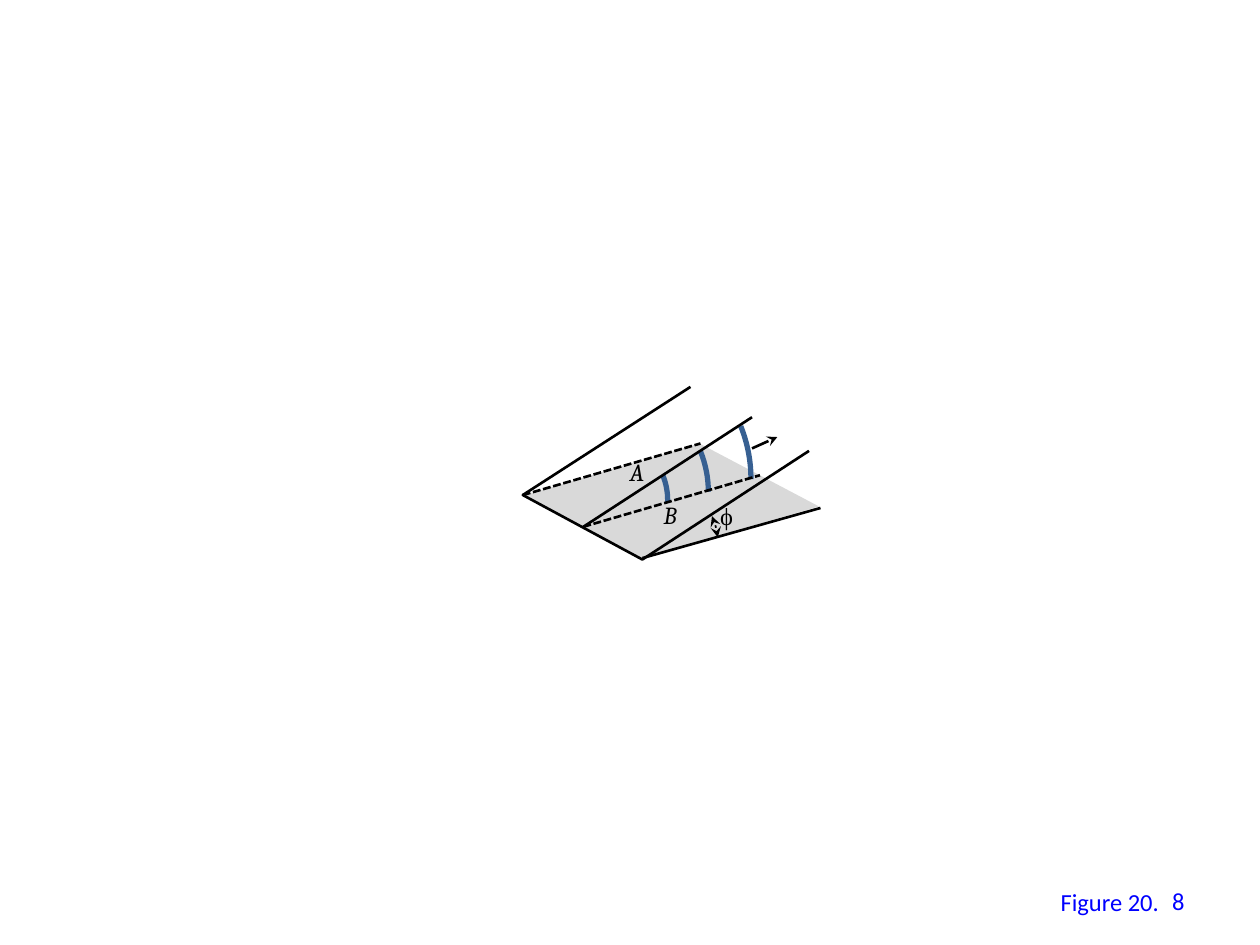
from lxml import etree
from pptx import Presentation
from pptx.dml.color import RGBColor
from pptx.enum.dml import MSO_LINE
from pptx.enum.shapes import MSO_CONNECTOR, MSO_SHAPE
from pptx.enum.text import MSO_ANCHOR, PP_ALIGN
from pptx.oxml.ns import qn
from pptx.util import Cm, Pt

ARC, STRAIGHT, DASH = MSO_SHAPE.ARC, MSO_CONNECTOR.STRAIGHT, MSO_LINE.SQUARE_DOT
LEFT, RIGHT = PP_ALIGN.LEFT, PP_ALIGN.RIGHT
TOP, MIDDLE = MSO_ANCHOR.TOP, MSO_ANCHOR.MIDDLE

THEME = {
    "ink": "000000", "wave": "376092", "plane": "D9D9D9", "note": "0000FF",
    "thin": 1, "edge": 1.5, "bold": 3,
    "math": {"name": "Cambria", "size": Pt(14), "italic": True},
    "greek": {"name": "Times New Roman", "size": Pt(14)},
    "foot": {"name": "Calibri", "size": Pt(14)},
}

# All lengths in cm
PLANE = [(10.57, 9.98), (12.93, 11.25), (16.51, 10.21), (14.1, 8.94)]
FRAME = [(13.92, 7.8), (10.54, 9.98), (12.95, 11.28), (16.31, 9.09)]

# start, end, dashed, arrow ends
LINES_LOW = [
    ((10.54, 9.98), (14.12, 8.94), True, ()),
    ((12.95, 11.25), (16.54, 10.24), False, ()),
]
LINES_TOP = [
    ((11.76, 10.62), (15.32, 9.58), True, ()),
    ((11.76, 10.62), (15.16, 8.41), False, ()),
    ((15.16, 9.04), (15.67, 8.81), False, ("tailEnd",)),
]

# left, top, size, start and end angle, colour, width, arrow ends
WAVE_LOW = [(10.82, 8.76, 2.64, (202.83, 0.97), "wave", "bold", ())]
ARCS_TOP = [
    (11.53, 9.53, 2.95, (201.643, 211.998), "ink", "thin", ("headEnd", "tailEnd")),
    (9.45, 6.81, 5.69, (202.83, 0.052), "wave", "bold", ()),
    (9.96, 7.75, 4.32, (202.83, 0.052), "wave", "bold", ()),
]

# text, box, font, colour, wrap, align, anchor
FIGURE = [("Figure 20.", (21.13, 17.75, 2.51, 0.86), "foot", "note", False, LEFT, TOP)]
LABELS = [
    ("A", (12.45, 9.09, 0.97, 0.86), "math", "ink", False, LEFT, TOP),
    ("B", (13.13, 9.96, 0.97, 0.86), "math", "ink", False, LEFT, TOP),
    ("ϕ", (14.27, 9.98, 0.79, 0.86), "greek", "ink", False, LEFT, TOP),
]
NUMBER = [("8", (18.21, 17.65, 5.92, 1.02), "foot", "note", True, RIGHT, MIDDLE)]


def tint(name):
    return RGBColor.from_string(THEME[name])


def stroke(shape, color, width, dashed=False, ends=()):
    line = shape.line
    line.color.rgb = tint(color)
    line.width = Pt(THEME[width])
    if dashed:
        line.dash_style = DASH
    for end in ends:
        etree.SubElement(shape.element.spPr.find(qn("a:ln")), qn("a:" + end), type="stealth")


def add_path(shapes, points, closed):
    start, *rest = [(Cm(x), Cm(y)) for x, y in points]
    pen = shapes.build_freeform(*start, scale=1.0)
    pen.add_line_segments(rest, close=closed)
    path = pen.convert_to_shape()
    path.shadow.inherit = False
    return path


def add_line(shapes, start, end, dashed, ends):
    line = shapes.add_connector(STRAIGHT, *map(Cm, start + end))
    stroke(line, "ink", "edge", dashed, ends)
    etree.SubElement(line.element.spPr, qn("a:effectLst"))


def add_arc(shapes, left, top, size, angles, color, width, ends):
    arc = shapes.add_shape(ARC, *map(Cm, (left, top, size, size)))
    arc.shadow.inherit = False
    arc.fill.background()
    for i, angle in enumerate(angles):
        arc.adjustments[i] = angle
    stroke(arc, color, width, ends=ends)


def add_text(shapes, text, box, font, color, wrap, align, anchor):
    frame = shapes.add_textbox(*map(Cm, box)).text_frame
    frame.word_wrap = wrap
    frame.vertical_anchor = anchor
    line = frame.paragraphs[0]
    line.alignment = align
    run = line.add_run()
    run.text = text
    for key, value in THEME[font].items():
        setattr(run.font, key, value)
    run.font.color.rgb = tint(color)


def add_all(make, shapes, items):
    for item in items:
        make(shapes, *item)


def main():
    deck = Presentation()
    deck.slide_width, deck.slide_height = Cm(25.4), Cm(19.05)
    shapes = deck.slides.add_slide(deck.slide_layouts[6]).shapes

    add_all(add_text, shapes, FIGURE)
    plane = add_path(shapes, PLANE, True)
    plane.fill.solid()
    plane.fill.fore_color.rgb = tint("plane")
    plane.line.fill.background()
    add_all(add_arc, shapes, WAVE_LOW)
    frame = add_path(shapes, FRAME, False)
    frame.fill.background()
    stroke(frame, "ink", "edge")
    add_all(add_line, shapes, LINES_LOW)
    add_all(add_text, shapes, LABELS)
    add_all(add_arc, shapes, ARCS_TOP)
    add_all(add_line, shapes, LINES_TOP)
    add_all(add_text, shapes, NUMBER)
    deck.save("out.pptx")


if __name__ == "__main__":
    main()
